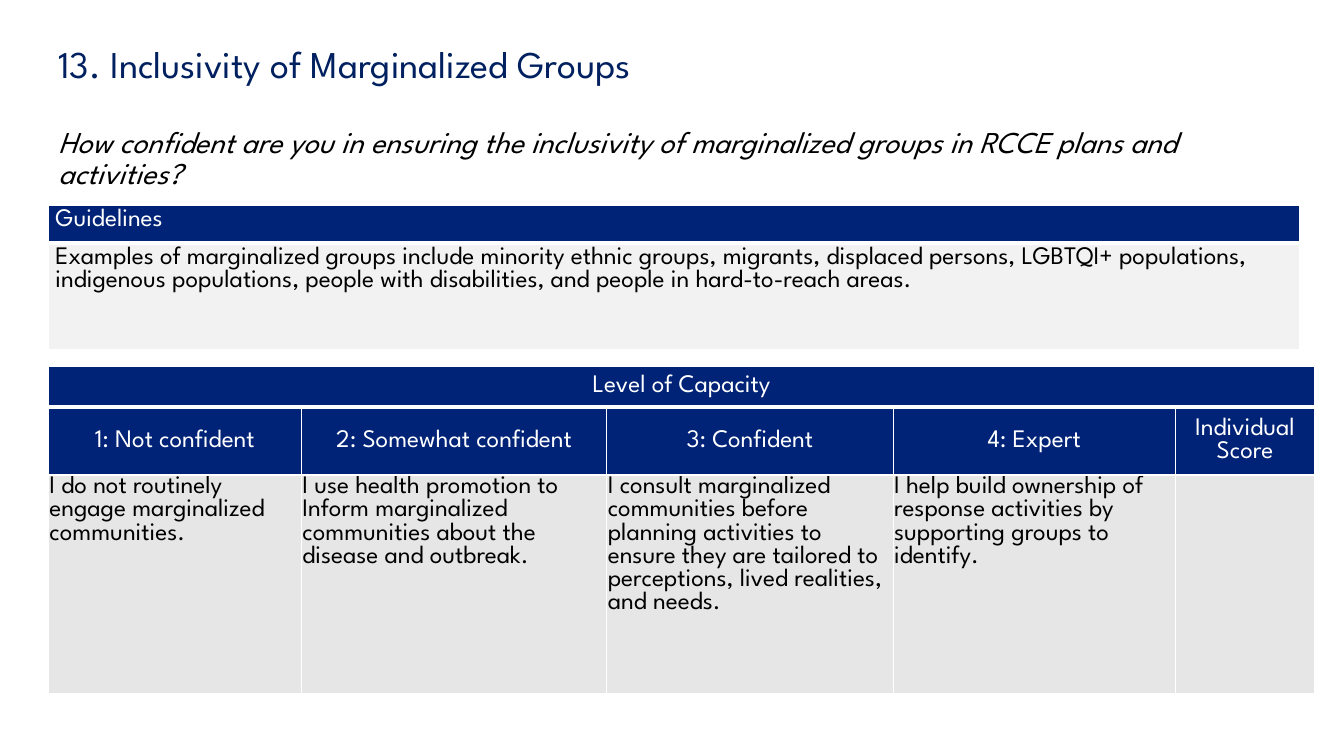
import pptx
import pptx.util
import pptx.dml.color
import pptx.enum.text
import pptx.oxml
import pptx.oxml.ns

Pt = pptx.util.Pt
RGB = pptx.dml.color.RGBColor
ALIGN = pptx.enum.text.PP_ALIGN
ANCHOR = pptx.enum.text.MSO_ANCHOR

FONT = "League Spartan"
WHITE = RGB(0xFF, 0xFF, 0xFF)
BLACK = RGB(0, 0, 0)
TITLE_BLUE = RGB(0x00, 0x20, 0x60)
HEADER_BLUE = RGB(0x01, 0x23, 0x77)
PALE_GREY = RGB(0xF2, 0xF2, 0xF2)
GREY = RGB(0xE7, 0xE6, 0xE6)

LEFT = 34.6
WIDE_MARGINS = (5, 2.6, 5, 2.6)
TIGHT_MARGINS = (0.7, 0.7, 0.7, 0)

LEVEL_HEADER = {"fill": HEADER_BLUE, "color": WHITE, "align": ALIGN.CENTER,
                "anchor": ANCHOR.MIDDLE, "margins": WIDE_MARGINS}
TITLE_ROW = {**LEVEL_HEADER, "bottom": 3}
LEVEL_BODY = {"fill": GREY, "color": BLACK, "align": ALIGN.LEFT,
              "anchor": ANCHOR.TOP, "margins": TIGHT_MARGINS}
GUIDE_HEADER = {**TITLE_ROW, "align": ALIGN.LEFT, "anchor": ANCHOR.TOP}
GUIDE_BODY = {**LEVEL_BODY, "fill": PALE_GREY, "margins": WIDE_MARGINS}


def set_attrs(obj, values):
    for name, value in values.items():
        setattr(obj, name, value)


def set_margins(frame, margins):
    """Set left, top, right and bottom margins of a cell or text frame."""
    for side, value in zip(("left", "top", "right", "bottom"), margins):
        setattr(frame, "margin_" + side, Pt(value))


def add_run(p, text, size, color, italic=False):
    r = p.add_run()
    r.text = text
    set_attrs(r.font, {"name": FONT, "size": Pt(size), "italic": italic})
    r.font.color.rgb = color


def add_borders(cell, bottom):
    """Draw white borders, 1 pt wide except for the bottom one."""
    tcPr = cell._tc.get_or_add_tcPr()
    for i, (side, width) in enumerate(zip("LRTB", (1, 1, 1, bottom))):
        tcPr.insert(i, pptx.oxml.parse_xml(
            f'<a:ln{side} {pptx.oxml.ns.nsdecls("a")} w="{Pt(width)}">'
            f'<a:solidFill><a:srgbClr val="{WHITE}"/></a:solidFill></a:ln{side}>'))


def format_cell(cell, text, style):
    set_margins(cell, style["margins"])
    cell.vertical_anchor = style["anchor"]
    cell.fill.solid()
    cell.fill.fore_color.rgb = style["fill"]
    add_borders(cell, style.get("bottom", 1))
    if text:
        p = cell.text_frame.paragraphs[0]
        p.alignment = style["align"]
        add_run(p, text, 18, style["color"])


def add_table(s, top, widths, rows):
    """Add a table; each row is (height, style, texts), short rows padded."""
    shape = s.shapes.add_table(len(rows), len(widths), Pt(LEFT), Pt(top),
                               Pt(sum(widths)), Pt(sum(row[0] for row in rows)))
    table = shape.table
    set_attrs(table, {"first_row": False, "horz_banding": False})
    for column, width in zip(table.columns, widths):
        column.width = Pt(width)
    for i, (height, style, texts) in enumerate(rows):
        table.rows[i].height = Pt(height)
        for j in range(len(widths)):
            text = texts[j] if j < len(texts) else ""
            format_cell(table.cell(i, j), text, style)
    return table


def add_heading(s, title, question):
    tf = s.shapes.add_textbox(Pt(LEFT), Pt(20.2), Pt(893.5), Pt(85)).text_frame
    set_attrs(tf, {"word_wrap": True, "vertical_anchor": ANCHOR.TOP})
    set_margins(tf, (7.2, 8.8, 7.2, 3.6))
    add_run(tf.paragraphs[0], title, 27, TITLE_BLUE)
    p = tf.add_paragraph()
    set_attrs(p, {"space_before": Pt(30), "line_spacing": Pt(22.5)})
    add_run(p, question, 21.6, BLACK, italic=True)


def main():
    prs = pptx.Presentation()
    set_attrs(prs, {"slide_width": Pt(960), "slide_height": Pt(540)})
    s = prs.slides.add_slide(prs.slide_layouts[6])

    add_heading(s, "13. Inclusivity of Marginalized Groups",
                "How confident are you in ensuring the inclusivity of "
                "marginalized groups in RCCE plans and activities?")

    levels = add_table(s, 261.4, (180.7, 218.2, 204.5, 201.6, 99.4), [
        (29.5, TITLE_ROW, ["Level of Capacity"]),
        (39, LEVEL_HEADER, ["1: Not confident", "2: Somewhat confident",
                            "3: Confident", "4: Expert", "Individual Score"]),
        (156.2, LEVEL_BODY, [
            "I do not routinely engage marginalized communities.",
            "I use health promotion to Inform marginalized communities about "
            "the disease and outbreak.",
            "I consult marginalized communities before planning activities to "
            "ensure they are tailored to perceptions, lived realities, and needs.",
            "I help build ownership of response activities by supporting "
            "groups to identify."]),
    ])
    levels.cell(0, 0).merge(levels.cell(0, 4))

    add_table(s, 146.9, (893.5,), [
        (22, GUIDE_HEADER, ["Guidelines"]),
        (76.3, GUIDE_BODY, [
            "Examples of marginalized groups include minority ethnic groups, "
            "migrants, displaced persons, LGBTQI+ populations, indigenous "
            "populations, people with disabilities, and people in "
            "hard-to-reach areas."]),
    ])
    prs.save("out.pptx")


if __name__ == "__main__":
    main()
